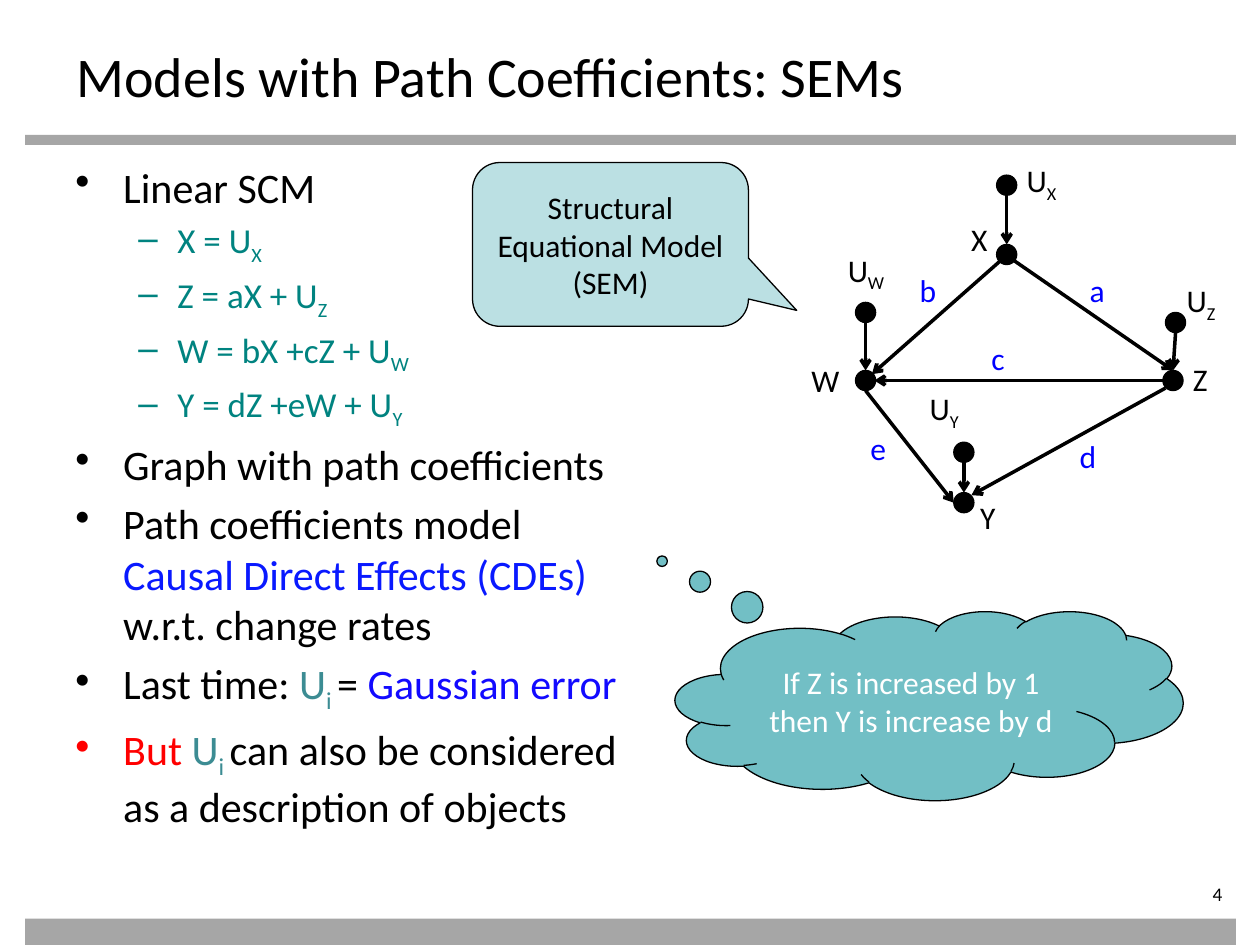
"""Build the slide on structural equation models with path coefficients."""
from lxml.etree import SubElement
from pptx import Presentation
from pptx.dml.color import RGBColor
from pptx.enum.shapes import MSO_CONNECTOR, MSO_SHAPE
from pptx.enum.text import MSO_ANCHOR, MSO_AUTO_SIZE, PP_ALIGN
from pptx.oxml.ns import qn
from pptx.util import Inches, Pt

BLACK = RGBColor(0x00, 0x00, 0x00)
WHITE = RGBColor(0xFF, 0xFF, 0xFF)
GRAY = RGBColor(0xA6, 0xA6, 0xA6)
RED = RGBColor(0xFF, 0x00, 0x00)
BLUE = RGBColor(0x00, 0x00, 0xFF)
EFFECT_BLUE = RGBColor(0x09, 0x19, 0xFF)
ERROR_BLUE = RGBColor(0x12, 0x0A, 0xFF)
GREEN = RGBColor(0x00, 0x83, 0x80)
TEAL = RGBColor(0x3C, 0x8C, 0x93)
CLOUD = RGBColor(0x72, 0xBF, 0xC5)
CALLOUT = RGBColor(0xBB, 0xE0, 0xE3)


def add_runs(p, size, *runs):
    for text, color, *sub in runs:
        for i, line in enumerate(text.split("\n")):
            if i:
                p.add_line_break()
            if not line:
                continue
            r = p.add_run()
            r.text = line
            r.font.name = "Calibri"
            r.font.size = Pt(size)
            r.font.color.rgb = color
            if sub:
                r._r.get_or_add_rPr().set("baseline", "-25000")


def add_shape(kind, x, y, w, h, fill, outlined=True):
    sp = s.shapes.add_shape(kind, Inches(x), Inches(y), Inches(w), Inches(h))
    sp.shadow.inherit = False
    sp.fill.solid()
    sp.fill.fore_color.rgb = fill
    if outlined:
        sp.line.color.rgb = BLACK
        sp.line.width = Pt(0.75)
    else:
        sp.line.fill.background()
    return sp


prs = Presentation()
prs.slide_width, prs.slide_height = Inches(10), Inches(7.5)
s = prs.slides.add_slide(prs.slide_layouts[6])

for y, h in [(1.07, 0.08), (7.29, 0.21)]:
    add_shape(MSO_SHAPE.RECTANGLE, 0.2, y, 9.61, h, GRAY, outlined=False)

title = s.shapes.add_textbox(Inches(0.51), Inches(0.28), Inches(9), Inches(0.55))
title.text_frame.word_wrap = True
add_runs(title.text_frame.paragraphs[0], 32, ("Models with Path Coefficients: SEMs", BLACK))

number = s.shapes.add_textbox(Inches(8.7), Inches(7), Inches(1.1), Inches(0.22))
tf = number.text_frame
tf.word_wrap = True
tf.margin_left = tf.margin_top = tf.margin_bottom = 0
tf.paragraphs[0].alignment = PP_ALIGN.RIGHT
add_runs(tf.paragraphs[0], 11, ("4", BLACK))

equations = [("X = U", "X"), ("Z = aX + U", "Z"), ("W = bX +cZ + U", "W"), ("Y = dZ +eW + U", "Y")]
noise = [("U", TEAL), ("i ", TEAL, True)]
items = [
    (0, [("Linear SCM", BLACK)]),
    *[(1, [(eq, GREEN), (sub, GREEN, True)]) for eq, sub in equations],
    (0, [("Graph with path coefficients", BLACK)]),
    (0, [("Path coefficients model \n", BLACK), ("Causal Direct Effects (CDEs)\n", EFFECT_BLUE),
         ("w.r.t. change rates", BLACK)]),
    (0, [("Last time: ", BLACK), *noise, ("= ", BLACK), ("Gaussian error", ERROR_BLUE)]),
    (0, [("But ", RED), *noise, ("can also be considered\nas a description of objects", BLACK)]),
]
levels = [(24, 0.38, -0.38, "•"), (20, 0.81, -0.31, "–")]
body = s.shapes.add_textbox(Inches(0.5), Inches(1.23), Inches(5.4), Inches(5.43))
tf = body.text_frame
tf.word_wrap = True
for i, (level, runs) in enumerate(items):
    size, margin, indent, bullet = levels[level]
    p = tf.add_paragraph() if i else tf.paragraphs[0]
    p.level = level
    p.space_before = Pt(0.2 * size if i else 0)
    pPr = p._p.get_or_add_pPr()
    pPr.set("marL", str(Inches(margin)))
    pPr.set("indent", str(Inches(indent)))
    SubElement(pPr, qn("a:buChar")).set("char", bullet)
    add_runs(p, size, *runs)

nodes = [(7.99, 1.47), (7.99, 2.02), (6.87, 2.48), (6.87, 3.02),
         (9.33, 2.56), (9.31, 3.02), (7.65, 3.59), (7.65, 3.99)]
for x, y in nodes:
    add_shape(MSO_SHAPE.OVAL, x - 0.08, y - 0.08, 0.16, 0.16, BLACK)

arrows = [
    (7.99, 1.55, 7.99, 1.94), (6.87, 2.56, 6.87, 2.94), (9.33, 2.64, 9.31, 2.94),
    (7.65, 3.67, 7.65, 3.91), (7.94, 2.07, 6.92, 2.97), (8.05, 2.07, 9.31, 2.94),
    (9.23, 3.02, 6.94, 3.02), (9.25, 3.08, 7.71, 3.93), (6.87, 3.1, 7.57, 3.99),
]
for ends in arrows:
    cx = s.shapes.add_connector(MSO_CONNECTOR.STRAIGHT, *[Inches(v) for v in ends])
    cx.line.color.rgb = BLACK
    cx.line.width = Pt(2)
    SubElement(cx.line._get_or_add_ln(), qn("a:tailEnd")).set("type", "arrow")
    SubElement(cx._element.spPr, qn("a:effectLst"))

labels = [
    (8.05, 1.23, 0.46, [("U", BLACK), ("X", BLACK, True)]),
    (6.63, 1.94, 0.51, [("U", BLACK), ("W", BLACK, True)]),
    (9.32, 2.18, 0.46, [("U", BLACK), ("Z", BLACK, True)]),
    (7.28, 3.04, 0.46, [("U", BLACK), ("Y", BLACK, True)]),
    (7.61, 1.7, 0.35, [("X", BLACK)]),
    (6.34, 2.82, 0.42, [("W", BLACK)]),
    (9.37, 2.81, 0.34, [("Z", BLACK)]),
    (7.68, 3.9, 0.34, [("Y", BLACK)]),
    (8.55, 2.1, 0.32, [("a", BLUE)]),
    (7.2, 2.1, 0.35, [("b", BLUE)]),
    (7.77, 2.64, 0.33, [("c", BLUE)]),
    (8.47, 3.42, 0.34, [("d", BLUE)]),
    (6.81, 3.36, 0.33, [("e", BLUE)]),
]
for x, y, w, runs in labels:
    tb = s.shapes.add_textbox(Inches(x), Inches(y), Inches(w), Inches(0.4))
    tb.text_frame.word_wrap = False
    tb.text_frame.auto_size = MSO_AUTO_SIZE.SHAPE_TO_FIT_TEXT
    add_runs(tb.text_frame.paragraphs[0], 18, *runs)

callouts = [
    (MSO_SHAPE.CLOUD_CALLOUT, (5.36, 4.85, 4.03, 1.5), CLOUD, (-0.526, -0.764),
     "If Z is increased by 1\nthen Y is increase by d", WHITE),
    (MSO_SHAPE.ROUNDED_RECTANGULAR_CALLOUT, (3.75, 1.29, 2.19, 1.3), CALLOUT, (0.675, 0.403, 0.167),
     "Structural Equational Model\n(SEM)", BLACK),
]
for kind, box, fill, adjustments, text, color in callouts:
    sp = add_shape(kind, *box, fill)
    for i, value in enumerate(adjustments):
        sp.adjustments[i] = value
    tf = sp.text_frame
    tf.word_wrap = True
    tf.vertical_anchor = MSO_ANCHOR.MIDDLE
    tf.paragraphs[0].alignment = PP_ALIGN.CENTER
    add_runs(tf.paragraphs[0], 18, (text, color))

prs.save("out.pptx")
